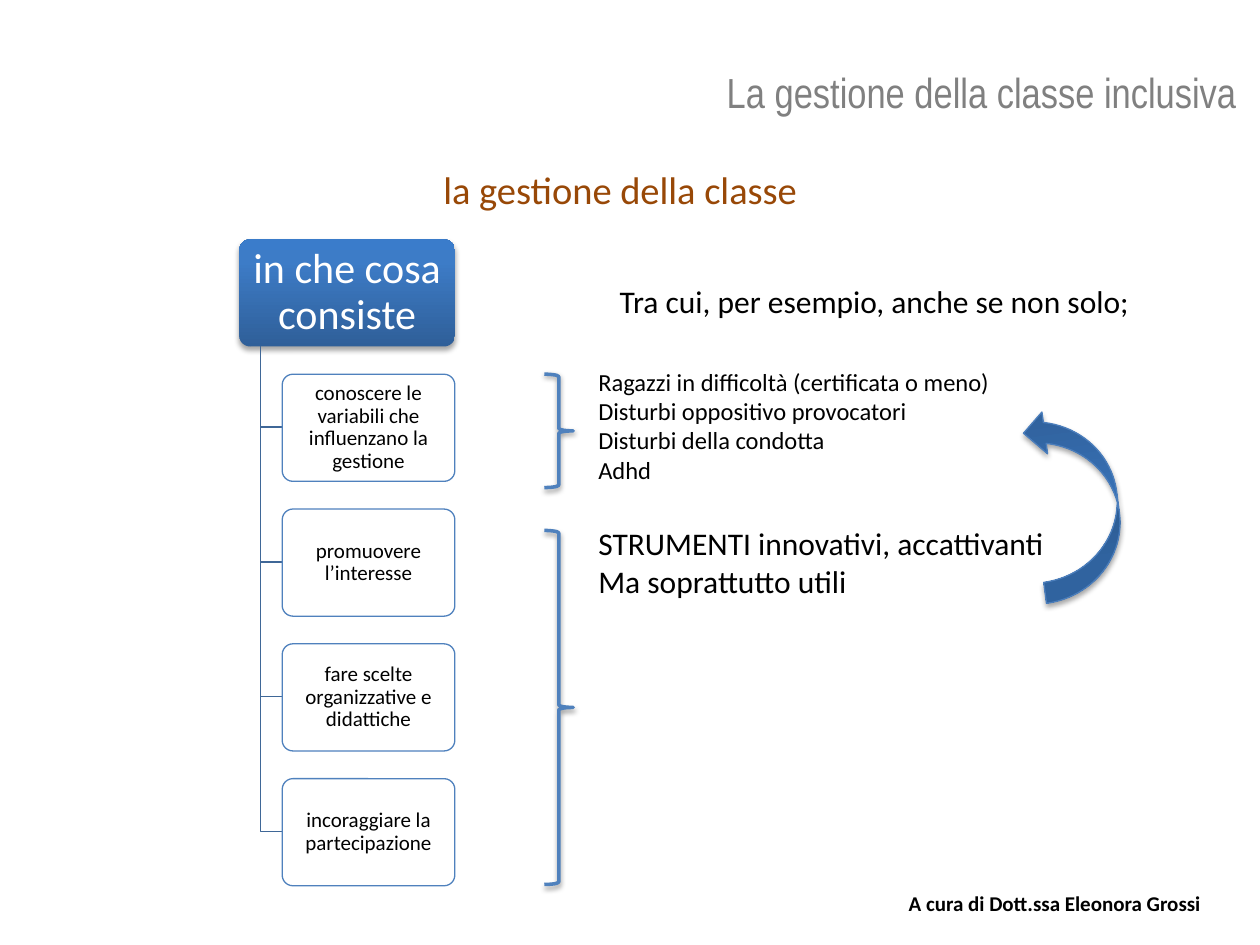
from lxml import etree
from pptx import Presentation
from pptx import util as u
from pptx.dml.color import RGBColor
from pptx.enum import shapes, text
from pptx.oxml import parse_xml
from pptx.oxml.ns import nsdecls, qn

PX = 9144  # 100 px to the inch
BLUE, BLACK = "4F81BD", "000000"
rgb = RGBColor.from_string
align, anchor, preset = text.PP_ALIGN, text.MSO_ANCHOR, shapes.MSO_SHAPE


def write(frame, lines, size, colour, alignment=align.LEFT, font="Calibri", spacing=None):
    frame.text = "\n".join(lines)
    for paragraph in frame.paragraphs:
        paragraph.alignment = alignment
        paragraph.line_spacing = spacing
        paragraph.font.size = u.Pt(size)
        paragraph.font.name = font
        paragraph.font.color.rgb = rgb(colour)


def add_depth(shape, distance, opacity, gradient=False):
    """Give the shape a soft shadow below it and, if asked, the blue gradient."""
    shape.shadow.inherit = False
    effects = shape._element.spPr.find(qn("a:effectLst"))
    effects.append(parse_xml(
        f'<a:outerShdw {nsdecls("a")} blurRad="{u.Pt(3.1)}" dist="{u.Pt(distance)}" '
        f'dir="5400000" rotWithShape="0"><a:srgbClr val="{BLACK}">'
        f'<a:alpha val="{opacity * 1000}"/></a:srgbClr></a:outerShdw>'))
    if gradient:
        shape.fill.gradient()
        stops = "".join(
            f'<a:gs pos="{percent * 1000}"><a:srgbClr val="{colour}"/></a:gs>'
            for percent, colour in ((0, "2F5F99"), (80, "3D7CC7"), (100, "3A7CCB")))
        blend = parse_xml(
            f'<a:gradFill {nsdecls("a")} rotWithShape="1"><a:gsLst>{stops}</a:gsLst>'
            '<a:lin ang="16200000" scaled="0"/></a:gradFill>')
        properties = shape._element.spPr
        properties.replace(properties.find(qn("a:gradFill")), blend)


prs = Presentation()
prs.slide_width, prs.slide_height = 1000 * PX, 750 * PX
slide = prs.slides.add_slide(prs.slide_layouts[5])
items = slide.shapes

# Title
title = slide.shapes.title
title.left, title.top, title.width, title.height = (n * PX for n in (185, 14, 796, 117))
frame = title.text_frame
frame.margin_left = frame.margin_right = frame.margin_top = frame.margin_bottom = 0
frame.vertical_anchor = anchor.MIDDLE
frame.auto_size = text.MSO_AUTO_SIZE.NONE
write(frame, ["La gestione della classe inclusiva"], 24, "808080", align.RIGHT, "Arial Narrow")

# Hierarchy: heading, then its branches at equal steps
topics = ["in che cosa consiste",
          "conoscere le variabili che influenzano la gestione",
          "promuovere l’interesse",
          "fare scelte organizzative e didattiche",
          "incoraggiare la partecipazione"]
TOP, STEP, BOX_HEIGHT, RIGHT = 190, 107, 85, 361
TRUNK_X, BRANCH_X = 207, 224

for level, topic in enumerate(topics):
    is_heading = level == 0
    left, top = 190 if is_heading else BRANCH_X, TOP + level * STEP
    if not is_heading:
        middle = top + BOX_HEIGHT // 2
        path = items.build_freeform(TRUNK_X, TOP + BOX_HEIGHT, scale=PX)
        path.add_line_segments([(TRUNK_X, middle), (BRANCH_X, middle)], close=False)
        branch = path.convert_to_shape()
        branch.fill.background()
        branch.line.color.rgb = rgb("3F6797")
        branch.line.width = u.Pt(0.75)
        branch.shadow.inherit = False

    box = items.add_shape(preset.ROUNDED_RECTANGLE, left * PX, top * PX,
                          (RIGHT - left) * PX, BOX_HEIGHT * PX)
    box.adjustments[0] = 0.1
    if is_heading:
        add_depth(box, 1.8, 35, gradient=True)
        box.line.fill.background()
    else:
        box.shadow.inherit = False
        box.fill.solid()
        box.fill.fore_color.rgb = rgb("FFFFFF")
        white = box._element.spPr.find(qn("a:solidFill"))[0]
        etree.SubElement(white, qn("a:alpha")).set("val", "90000")
        box.line.color.rgb = rgb(BLUE)
        box.line.width = u.Pt(0.75)
    frame = box.text_frame
    frame.word_wrap = True
    frame.vertical_anchor = anchor.MIDDLE
    frame.margin_left = frame.margin_right = (8 if is_heading else 6) * PX
    frame.margin_top = frame.margin_bottom = 5 * PX
    write(frame, [topic], 24 if is_heading else 12, "FFFFFF" if is_heading else BLACK,
          align.CENTER, spacing=0.9)

# Subtitle
subtitle = items.add_textbox(342 * PX, 132 * PX, 335 * PX, 58 * PX).text_frame
subtitle.word_wrap = True
subtitle.margin_left, subtitle.margin_right = 10 * PX, 5 * PX
subtitle.margin_top = subtitle.margin_bottom = 0
write(subtitle, ["la gestione della classe"], 22, "984807")

# Notes beside the hierarchy, and the credit
notes = [
    ((482, 219, 431, 40), 18, ["Tra cui, per esempio, anche se non solo;"]),
    ((465, 286, 334, 135), 14, ["Ragazzi in difficoltà (certificata o meno)",
                                "Disturbi oppositivo provocatori",
                                "Disturbi della condotta",
                                "Adhd"]),
    ((465, 411, 379, 101), 18, ["STRUMENTI innovativi, accattivanti", "Ma soprattutto utili"]),
]
for place, size, lines in notes:
    frame = items.add_textbox(*(n * PX for n in place)).text_frame
    frame.word_wrap = False
    write(frame, lines, size, BLACK)

credit = items.add_textbox(707 * PX, 702 * PX, 256 * PX, 30 * PX).text_frame
credit.word_wrap = False
write(credit, ["A cura di Dott.ssa Eleonora Grossi"], 12, BLACK, align.RIGHT)
credit.paragraphs[0].font.bold = True

# Braces grouping the branches
for top, height in ((297, 90), (421, 281)):
    brace = items.add_shape(preset.RIGHT_BRACE, 432 * PX, top * PX, 23 * PX, height * PX)
    brace.fill.background()
    brace.line.color.rgb = rgb(BLUE)
    brace.line.width = u.Pt(2)
    add_depth(brace, 1.6, 38)

# Arrow from the tools back to the pupils
arrow = items.add_shape(preset.CURVED_RIGHT_ARROW, 820 * PX, 322 * PX, 67 * PX, 153 * PX)
arrow.rotation = 172.3
add_depth(arrow, 1.8, 35, gradient=True)
arrow.line.color.rgb = rgb("4B7EBC")
arrow.line.width = u.Pt(0.75)

prs.save("out.pptx")
